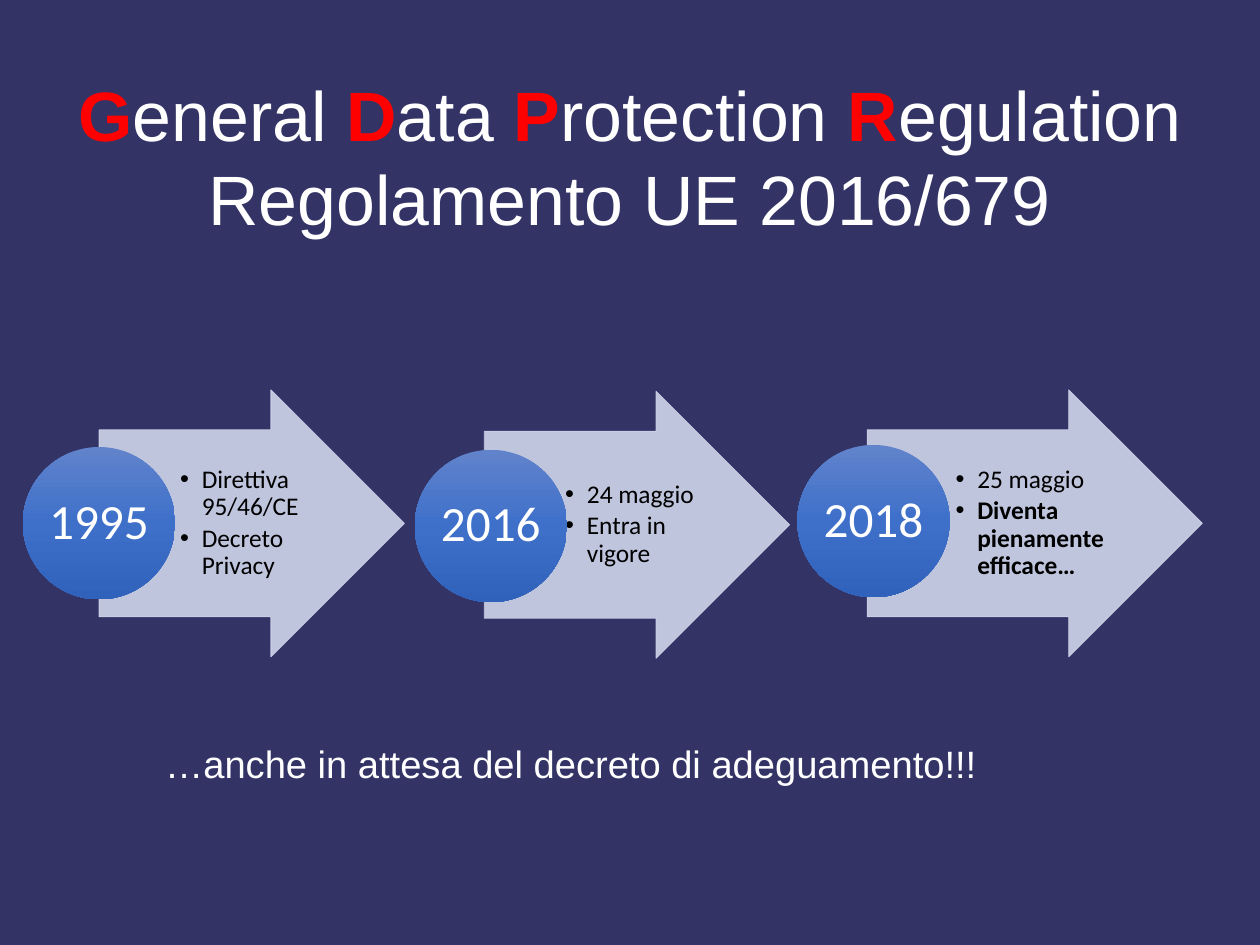
from dataclasses import dataclass
from lxml import etree
from copy import deepcopy
from pptx import Presentation
from pptx import util as u
from pptx.dml.color import RGBColor
from pptx.enum import shapes, text
from pptx.oxml import ns


@dataclass(frozen=True)
class Theme:
    back: str = "333366"
    light: str = "FFFFFF"
    dark: str = "000000"
    red: str = "FF0000"
    arrow: str = "CFD5EA"
    blues: tuple = ("6183CB", "3E70CA", "3062BB")
    head: int = 44
    year: int = 31
    foot: int = 24
    note: int = 16
    sans: str = "Arial"
    body: str = "Calibri"


def rgb(code):
    return RGBColor.from_string(code)


def fade(node, share):
    """Set the opacity of every colour below a node, in percent."""
    for tint in node.iter(ns.qn("a:srgbClr")):
        etree.SubElement(tint, ns.qn("a:alpha"), val=str(share * 1000))


def write(shape, paras, size, font, color, align="LEFT", anchor="TOP",
          inset=(0, 0, 0, 0), spacing=1.0, after=0, bullet=None):
    """Fill a shape; each paragraph is a list of (text, color, bold) runs."""
    frame = shape.text_frame
    frame.word_wrap = True
    frame.vertical_anchor = getattr(text.MSO_ANCHOR, anchor)
    (frame.margin_left, frame.margin_top,
     frame.margin_right, frame.margin_bottom) = map(u.Inches, inset)
    for i, runs in enumerate(paras):
        para = frame.add_paragraph() if i else frame.paragraphs[0]
        para.alignment = getattr(text.PP_ALIGN, align)
        para.line_spacing = spacing
        para.space_after = u.Pt(after)
        if bullet:
            props = para._p.get_or_add_pPr()
            props.set("marL", str(u.Inches(0.19)))
            props.set("indent", str(-u.Inches(0.19)))
            etree.SubElement(props, ns.qn("a:buFont"), typeface=bullet)
            etree.SubElement(props, ns.qn("a:buChar"), char="•")
        for words, tone, bold in runs:
            if words == "\n":
                para.add_line_break()
                continue
            run = para.add_run()
            run.text = words
            run.font.size, run.font.name = u.Pt(size), font
            run.font.bold = bold
            run.font.color.rgb = rgb(tone or color)


class Deck:
    """Places elements on a grid of 100 columns by 100 rows."""

    def __init__(self, theme):
        self.theme = theme
        self.file = Presentation()
        self.file.slide_width = u.Cm(28)
        self.file.slide_height = u.Cm(21)
        self.slide = self.file.slides.add_slide(self.file.slide_layouts[6])
        fill = self.slide.background.fill
        fill.solid()
        fill.fore_color.rgb = rgb(theme.back)

    def place(self, x, y, w, h):
        wide, high = self.file.slide_width, self.file.slide_height
        return [int(n * side / 100) for n, side in
                ((x, wide), (y, high), (w, wide), (h, high))]

    def label(self, box, paras, **style):
        area = self.slide.shapes.add_textbox(*self.place(*box))
        write(area, paras, **style)

    def shape(self, kind, box):
        item = self.slide.shapes.add_shape(kind, *self.place(*box))
        item.shadow.inherit = False
        return item

    def arrow(self, box):
        item = self.shape(shapes.MSO_SHAPE.RIGHT_ARROW, box)
        item.adjustments[0], item.adjustments[1] = 0.7, 0.5
        item.fill.solid()
        item.fill.fore_color.rgb = rgb(self.theme.arrow)
        item.line.color.rgb = rgb(self.theme.arrow)
        item.line.width = u.Pt(0.5)
        fade(item._element.spPr, 90)

    def notes(self, box, paras):
        x, y, w, h = box
        self.label((x + w / 4, y + 0.15 * h, 0.49 * w, 0.7 * h), paras,
                   size=self.theme.note, font=self.theme.body,
                   color=self.theme.dark, anchor="MIDDLE",
                   bullet=self.theme.sans, inset=(0.04, 0.01, 0.02, 0.01),
                   spacing=0.9, after=2.4)

    def disc(self, x, y, year):
        item = self.shape(shapes.MSO_SHAPE.OVAL, (x, y, 12.09, 16.13))
        item.line.fill.background()
        item.fill.gradient()
        item.fill.gradient_angle = 270
        stops = item._element.spPr.find(".//" + ns.qn("a:gsLst"))
        stops.append(deepcopy(stops[0]))
        for i, (stop, blue) in enumerate(
                zip(item.fill.gradient_stops, self.theme.blues)):
            stop.color.rgb = rgb(blue)
            stop.position = i / 2
        write(item, [[(year, None, False)]], size=self.theme.year,
              font=self.theme.body, color=self.theme.light, align="CENTER",
              anchor="MIDDLE", inset=(0.02,) * 4, spacing=0.9)


def main():
    theme = Theme()
    deck = Deck(theme)

    # Title with red initials
    title = []
    for word in ("General ", "Data ", "Protection ", "Regulation"):
        title += [(word[0], theme.red, True), (word[1:], None, False)]
    title += [("\n", None, False), ("Regolamento UE 2016/679", None, False)]
    deck.label((5.7, 8.1, 88.63, 16.7), [title], size=theme.head,
               font=theme.sans, color=theme.light, align="CENTER",
               anchor="MIDDLE")

    # Timeline: arrow left, top and width, disc left and top, year, notes
    steps = (
        (7.87, 41.25, 24.23, 1.81, 47.3, "1995",
         (("Direttiva 95/46/CE", False), ("Decreto Privacy", False))),
        (38.44, 41.4, 24.23, 32.91, 47.6, "2016",
         (("24 maggio", False), ("Entra in vigore", False))),
        (68.83, 41.25, 26.59, 63.28, 47.08, "2018",
         (("25 maggio", False), ("Diventa pienamente efficace…", True))),
    )
    for x, y, w, left, top, year, lines in steps:
        box = (x, y, w, 28.25)
        deck.arrow(box)
        deck.notes(box, [[(line, None, bold)] for line, bold in lines])
        deck.disc(left, top, year)

    # Closing remark
    deck.label((12.22, 77.75, 75.56, 6.05),
               [[("…anche in attesa del decreto di adeguamento!!!",
                  None, False)]],
               size=theme.foot, font=theme.sans, color=theme.light,
               inset=(0.1, 0.05, 0.1, 0.05))

    deck.file.save("out.pptx")


if __name__ == "__main__":
    main()
